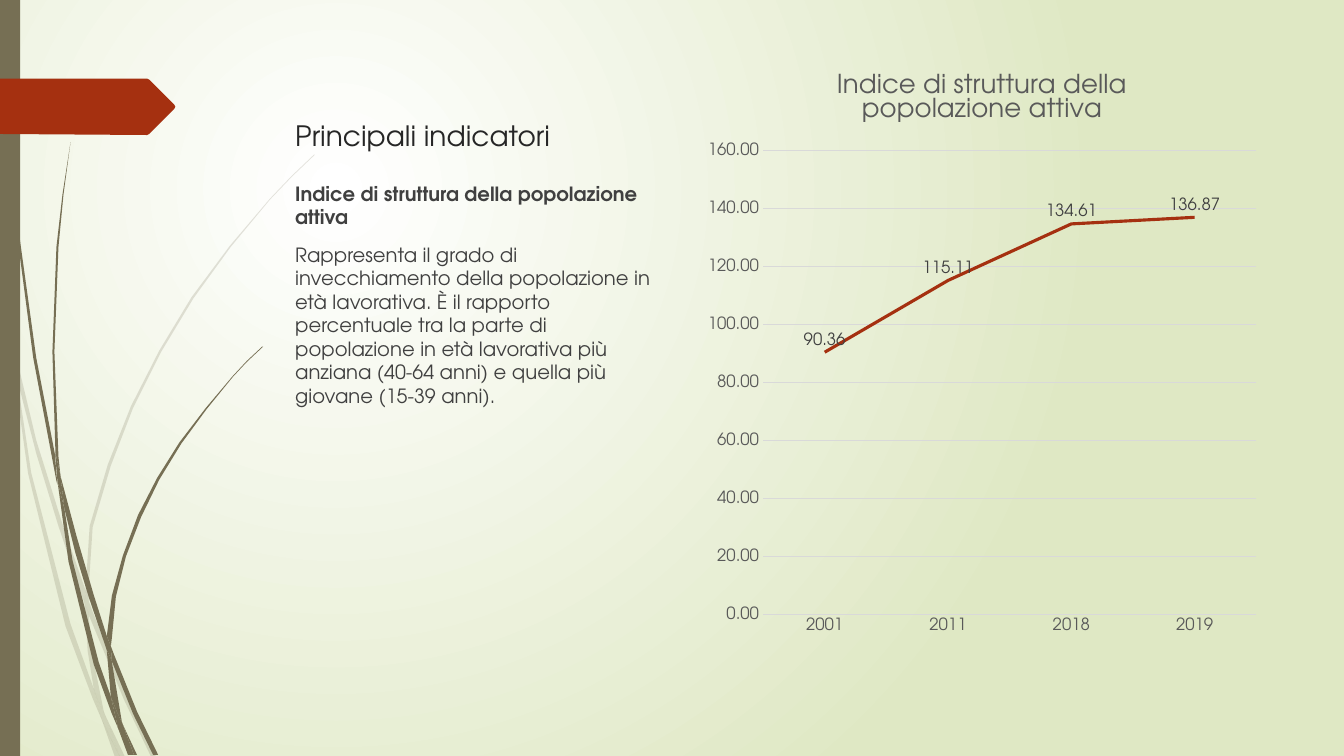
"""Build a slide on the structure index of the active population."""
from lxml import etree
from pptx import Presentation
from pptx import util as u
from pptx.chart import data
from pptx.dml import color
from pptx.enum import chart as charts, shapes, text
from pptx.oxml import ns

FONT = "TeX Gyre Adventor"
COLORS = {"white": "FFFFFF", "lime": "DFE8C4", "olive": "766F54", "rust": "A53010",
          "title": "262626", "body": "404040", "axis": "595959", "grid": "D9D9D9"}
HUNDREDTH_INCH = u.Cm(2.54) / 100

PALE_WISPS = [
    [(11, 350), (9, 322), (0, 282), (0, 299), (10, 344)],
    [(58, 522), (84, 599), (85, 586), (62, 520), (36, 437), (14, 345), (17, 376), (36, 450)],
    [(92, 607), (88, 596), (88, 610), (123, 694), (150, 751), (155, 751), (127, 692)],
    [(119, 751), (124, 751), (105, 711)],
    [(93, 683), (70, 619), (31, 469), (17, 376), (11, 350), (28, 470), (65, 621), (92, 693),
     (101, 714), (99, 707)],
    [(84, 599), (87, 646), (93, 683), (96, 692), (105, 711), (103, 706), (91, 646), (88, 610),
     (88, 608)],
    [(88, 584), (92, 523), (110, 462), (132, 405), (160, 349), (192, 296), (229, 245),
     (268, 198), (290, 175), (312, 154), (312, 153), (289, 175), (268, 197), (228, 244),
     (190, 295), (158, 348), (130, 403), (107, 461), (89, 522), (85, 584), (85, 586), (88, 596)],
    [(101, 714), (114, 751), (119, 751)],
    [(88, 608), (88, 610), (88, 596), (85, 586), (84, 599)],
    [(96, 692), (93, 683), (99, 707), (101, 714), (119, 751), (105, 711)],
]
DARK_WISPS = [
    [(7, 110), (17, 233), (33, 355), (56, 477), (57, 481), (55, 457), (55, 453), (36, 355),
     (19, 232), (8, 109), (5, 48), (4, 0), (3, 0), (4, 48)],
    [(88, 592), (106, 645), (106, 633), (106, 631), (93, 590), (76, 532), (60, 472), (64, 505),
     (75, 549)],
    [(113, 649), (110, 641), (111, 656), (132, 708), (152, 749), (157, 749), (136, 706)],
    [(110, 691), (98, 657), (72, 556), (64, 505), (57, 477), (68, 557), (93, 659), (111, 708),
     (117, 722), (116, 717)],
    [(60, 472), (58, 453), (54, 349), (58, 245), (63, 193), (70, 141), (62, 193), (56, 245),
     (52, 349), (55, 449)],
    [(133, 749), (136, 749), (122, 719)],
    [(57, 477), (64, 505), (60, 472), (55, 449), (55, 453)],
    [(111, 633), (115, 592), (125, 552), (140, 513), (158, 476), (180, 440), (205, 406),
     (231, 374), (245, 359), (261, 344), (260, 344), (245, 358), (231, 373), (204, 405),
     (178, 439), (156, 474), (137, 511), (122, 551), (111, 591), (106, 631), (110, 641)],
    [(117, 722), (127, 749), (131, 749)],
    [(106, 645), (110, 691), (116, 706), (122, 719), (121, 716), (111, 656), (109, 651)],
    [(106, 645), (109, 651), (111, 656), (110, 641), (106, 631), (106, 633)],
    [(116, 706), (110, 691), (116, 717), (117, 722), (130, 749), (133, 749), (122, 719)],
]
ARROW = [(173, 108), (148, 133), (146, 134), (0, 133), (0, 78), (146, 78), (148, 79),
         (173, 104), (174, 106)]


def rgb(name):
    """Return the colour of that name."""
    return color.RGBColor.from_string(COLORS[name])


def paint(shape, name, alpha=100):
    """Fill a shape flat, without outline or shadow."""
    shape.shadow.inherit = False
    shape.line.fill.background()
    shape.fill.solid()
    shape.fill.fore_color.rgb = rgb(name)
    if alpha < 100:
        tint = next(shape.fill._xPr.iter(ns.qn("a:srgbClr")))
        etree.SubElement(tint, ns.qn("a:alpha"), val=str(alpha * 1000))


def add_outline(parent, points, name, alpha=100):
    """Draw a closed outline given in hundredths of an inch."""
    builder = parent.shapes.build_freeform(*points[0], scale=HUNDREDTH_INCH)
    builder.add_line_segments(points[1:], close=True)
    paint(builder.convert_to_shape(), name, alpha)


def add_wisps(page, wisps, alpha):
    """Draw a group of grass blades."""
    group = page.shapes.add_group_shape()
    for points in wisps:
        add_outline(group, points, "olive", alpha)


def set_backdrop(page):
    """Give the page a radial gradient."""
    fill = page.background.fill
    fill.gradient()
    for stop, name in zip(fill.gradient_stops, ("white", "lime")):
        stop.color.rgb = rgb(name)
    gradient = next(page.element.iter(ns.qn("a:gradFill")))
    gradient.remove(gradient.find(ns.qn("a:lin")))
    radial = etree.SubElement(gradient, ns.qn("a:path"), {"path": "circle"})
    etree.SubElement(radial, ns.qn("a:fillToRect"),
                     l="50000", t="50000", r="100000", b="100000")


def set_font(font, size, name, bold=False):
    """Set face, size, colour and weight."""
    font.name, font.size, font.bold = FONT, u.Pt(size), bold
    font.color.rgb = rgb(name)


def add_text(page, top, height, paragraphs, size, name, anchor, before=0):
    """Add a text box of (wording, bold) paragraphs in the left column."""
    box = page.shapes.add_textbox(u.Cm(7.19), u.Cm(top), u.Cm(9.73), u.Cm(height))
    frame = box.text_frame
    frame.word_wrap = True
    frame.vertical_anchor = anchor
    for index, (wording, bold) in enumerate(paragraphs):
        para = frame.add_paragraph() if index else frame.paragraphs[0]
        para.space_before = u.Pt(before)
        span = para.add_run()
        span.text = wording
        set_font(span.font, size, name, bold)


def style_line(line, name, width):
    """Set the colour and width of a line."""
    line.color.rgb = rgb(name)
    line.width = u.Pt(width)


def add_index_chart(page):
    """Add the line chart of the index by year."""
    table = data.CategoryChartData(number_format="0.00")
    table.categories = ["2001", "2011", "2018", "2019"]
    table.add_series("Series 1", [90.36, 115.11, 134.61, 136.87])
    chart = page.shapes.add_chart(charts.XL_CHART_TYPE.LINE, u.Cm(17.55), u.Cm(1.24),
                                  u.Cm(14.4), u.Cm(15.04), table).chart
    chart.has_legend = False
    set_font(chart.font, 12, "axis")
    span = chart.chart_title.text_frame.paragraphs[0].add_run()
    span.text = "Indice di struttura della popolazione attiva"
    set_font(span.font, 18.6, "axis")

    years, values = chart.category_axis, chart.value_axis
    for axis in (years, values):
        axis.major_tick_mark = axis.minor_tick_mark = charts.XL_TICK_MARK.NONE
        set_font(axis.tick_labels.font, 12, "axis")
    style_line(years.format.line, "grid", 0.75)
    values.format.line.fill.background()
    style_line(values.major_gridlines.format.line, "grid", 0.75)
    values.minimum_scale, values.maximum_scale, values.major_unit = 0, 160, 20
    values.tick_labels.number_format = "0.00"
    values.tick_labels.number_format_is_linked = False

    plot = chart.plots[0]
    plot.vary_by_categories = False
    series = plot.series[0]
    series.smooth = False
    series.marker.style = charts.XL_MARKER_STYLE.NONE
    style_line(series.format.line, "rust", 2.25)
    labels = series.data_labels
    labels.show_value = True
    labels.position = charts.XL_LABEL_POSITION.ABOVE
    labels.number_format, labels.number_format_is_linked = "0.00", False
    set_font(labels.font, 12, "body")


def main():
    """Build and save the deck."""
    deck = Presentation()
    deck.slide_width, deck.slide_height = u.Cm(33.87), u.Cm(19.05)
    page = deck.slides.add_slide(deck.slide_layouts[6])
    set_backdrop(page)
    add_wisps(page, PALE_WISPS, 20)
    add_wisps(page, DARK_WISPS, 100)
    band = page.shapes.add_shape(shapes.MSO_SHAPE.RECTANGLE, 0, 0, u.Cm(0.51), u.Cm(19.05))
    paint(band, "olive")
    add_outline(page, ARROW, "rust")
    add_text(page, 1.24, 2.72, [("Principali indicatori", False)], 20, "title",
             text.MSO_ANCHOR.BOTTOM)
    add_index_chart(page)
    add_text(page, 4.45, 11.84, [
        ("Indice di struttura della popolazione attiva", True),
        ("Rappresenta il grado di invecchiamento della popolazione in età lavorativa. "
         "È il rapporto percentuale tra la parte di popolazione in età lavorativa più "
         "anziana (40-64 anni) e quella più giovane (15-39 anni).", False),
    ], 14, "body", text.MSO_ANCHOR.TOP, before=10)
    deck.save("out.pptx")


if __name__ == "__main__":
    main()
